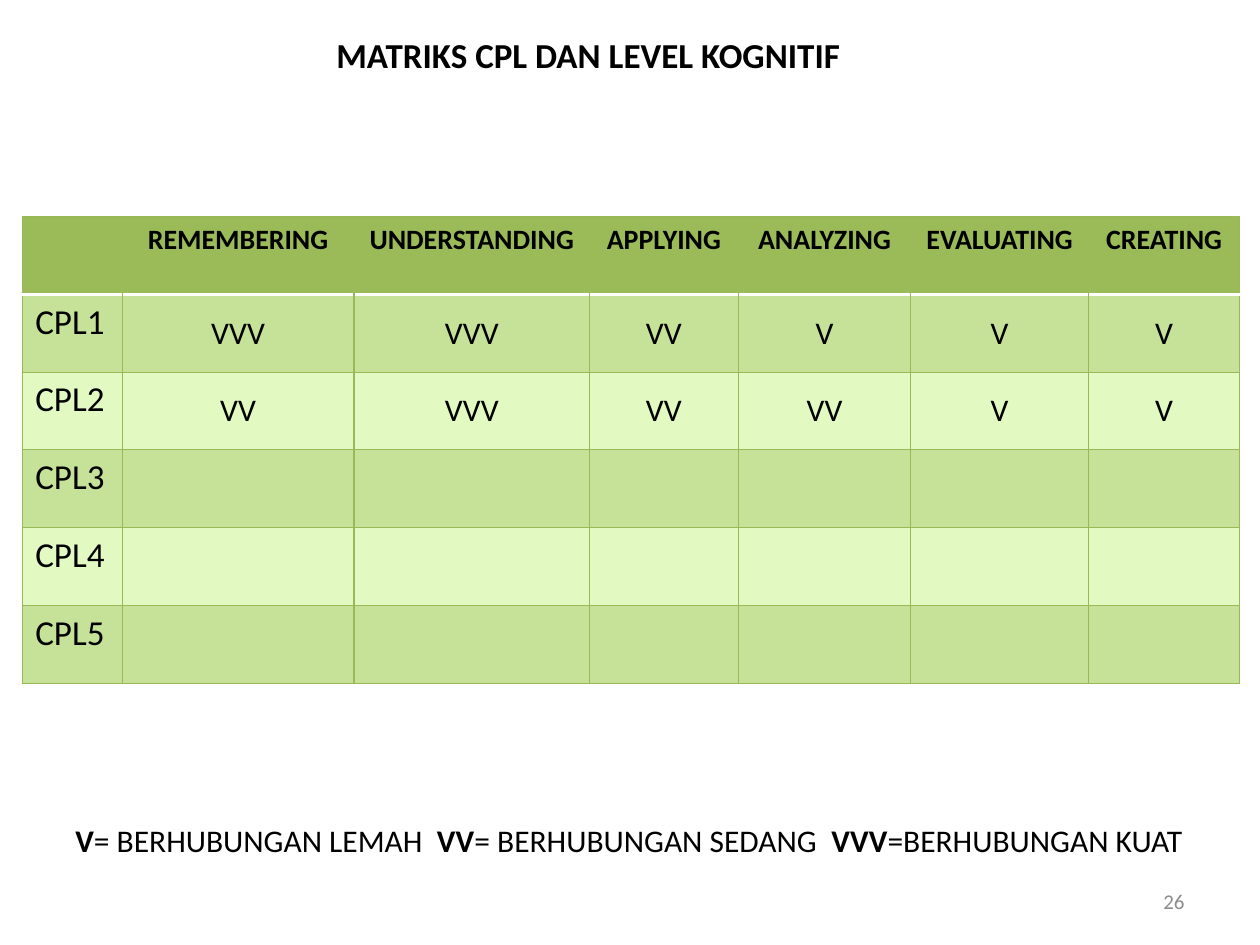
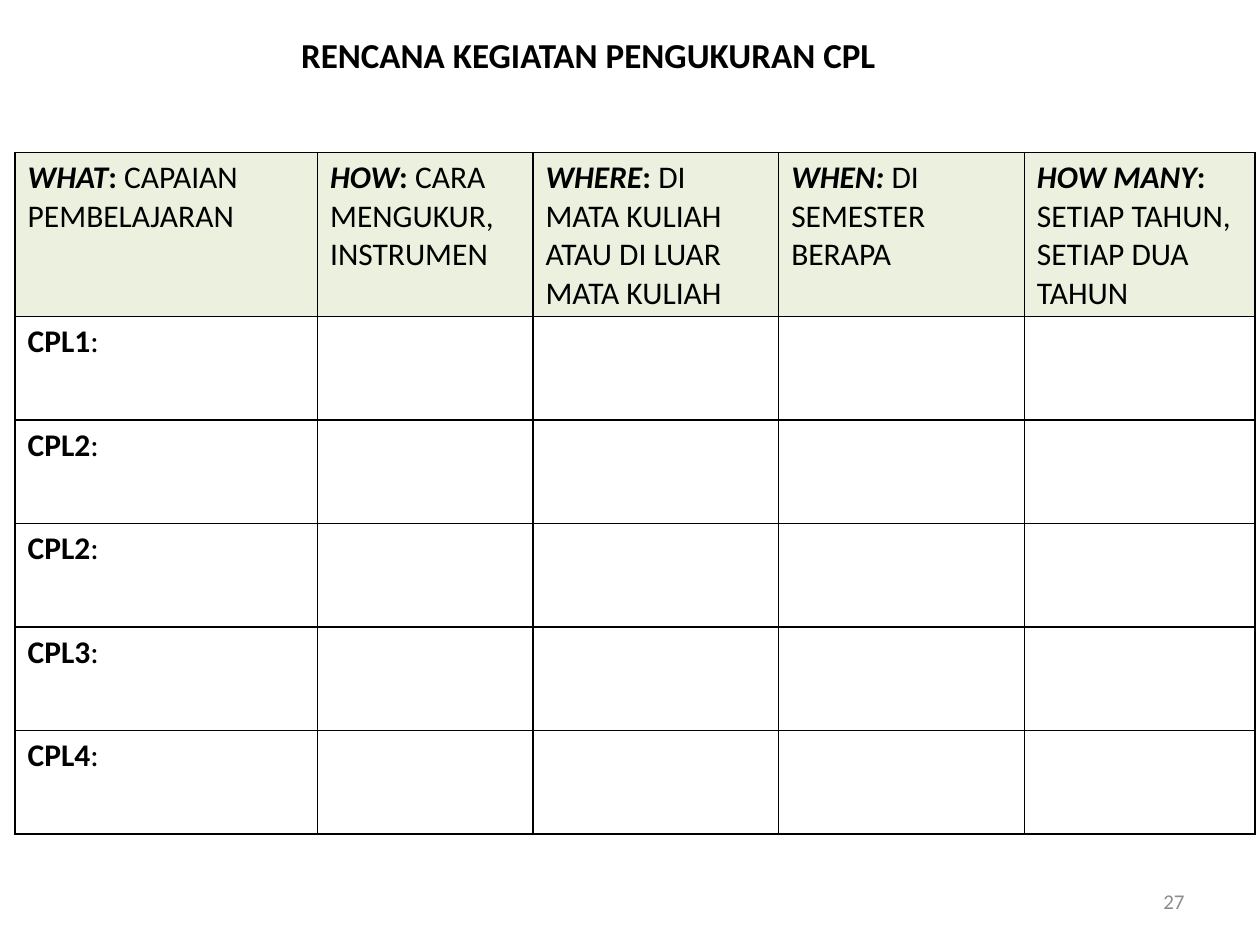
from dataclasses import dataclass
from typing import NamedTuple

from lxml import etree
from pptx import Presentation
from pptx import util as u
from pptx.dml.color import RGBColor
from pptx.enum import text as t
from pptx.oxml import ns

COLUMNS, ROWS = 100, 75  # the slide as a grid of square cells
SLIDE_WIDTH, SLIDE_HEIGHT = u.Inches(10), u.Inches(7.5)

FONT = "Calibri"
BLACK, WHITE, GREY = "000000", "FFFFFF", "8C8C8C"
GREEN, GREEN_LINE = "9BBB59", "98B955"
BAND_DARK, BAND_LIGHT = "C6E298", "E2FAC2"
PALE_GREEN = "EBF1DE"
PLAIN_TABLE_STYLE = "{2D5ABB26-0587-4C30-8999-92F81FD0307C}"


class Span(NamedTuple):
    text: str
    bold: bool = False
    italic: bool = False


class Style(NamedTuple):
    size: float
    align: t.PP_ALIGN = t.PP_ALIGN.LEFT
    anchor: t.MSO_ANCHOR = t.MSO_ANCHOR.TOP
    color: str = BLACK


class Area(NamedTuple):
    left: float
    top: float
    width: float
    height: float


class Edge(NamedTuple):
    color: str
    points: float


@dataclass
class Cell:
    spans: list[Span]
    style: Style
    fill: str
    edges: dict[str, Edge]


TITLE_AREA = Area(0.3, 2.2, 92.8, 5.5)
NUMBER_AREA = Area(71.7, 69.5, 23.3, 4)
TITLE = Style(20, t.PP_ALIGN.CENTER)
NUMBER = Style(12, t.PP_ALIGN.RIGHT, t.MSO_ANCHOR.MIDDLE, GREY)
BODY = Style(18)

LEVELS = ["REMEMBERING", "UNDERSTANDING", "APPLYING",
          "ANALYZING", "EVALUATING", "CREATING"]
STRENGTHS = {
    "CPL1": ["VVV", "VVV", "VV", "V", "V", "V"],
    "CPL2": ["VV", "VVV", "VV", "VV", "V", "V"],
    "CPL3": [""] * 6,
    "CPL4": [""] * 6,
    "CPL5": [""] * 6,
}
LEGEND = [
    Span("V", bold=True), Span("= BERHUBUNGAN LEMAH\t"),
    Span("VV", bold=True), Span("= BERHUBUNGAN SEDANG\t"),
    Span("VVV", bold=True), Span("=BERHUBUNGAN KUAT"),
]
QUESTIONS = [
    [Span("WHAT", True, True), Span(": ", True), Span("CAPAIAN PEMBELAJARAN")],
    [Span("HOW", True, True), Span(": ", True), Span("CARA MENGUKUR, INSTRUMEN")],
    [Span("WHERE", True, True), Span(": ", True),
     Span("DI MATA KULIAH ATAU DI LUAR MATA KULIAH")],
    [Span("WHEN: ", True, True), Span("DI SEMESTER BERAPA")],
    [Span("HOW MANY", True, True), Span(": ", True),
     Span("SETIAP TAHUN, SETIAP DUA TAHUN")],
]
OUTCOMES = ["CPL1", "CPL2", "CPL2", "CPL3", "CPL4"]


def across(columns: float) -> int:
    return round(SLIDE_WIDTH * columns / COLUMNS)


def down(rows: float) -> int:
    return round(SLIDE_HEIGHT * rows / ROWS)


def place(area: Area) -> tuple[int, int, int, int]:
    return across(area.left), down(area.top), across(area.width), down(area.height)


def rgb(color: str) -> RGBColor:
    return RGBColor.from_string(color)


def write(frame, spans: list[Span], style: Style, tabs: tuple[float, ...] = ()) -> None:
    """Fill the first paragraph; tabs are grid columns from the text's left edge."""
    paragraph = frame.paragraphs[0]
    paragraph.alignment = style.align
    if tabs:
        tab_list = etree.SubElement(paragraph._p.get_or_add_pPr(), ns.qn("a:tabLst"))
        for stop in tabs:
            etree.SubElement(tab_list, ns.qn("a:tab"), pos=str(across(stop)), algn="l")
    font = paragraph.font
    font.name, font.size = FONT, u.Pt(style.size)
    font.color.rgb = rgb(style.color)
    font.bold = bool(spans) and all(span.bold for span in spans)
    for span in spans:
        run = paragraph.add_run()
        run.text = span.text
        run.font.bold, run.font.italic = span.bold, span.italic


def add_text(slide, area: Area, spans: list[Span], style: Style,
             tabs: tuple[float, ...] = ()) -> None:
    frame = slide.shapes.add_textbox(*place(area)).text_frame
    frame.word_wrap = True
    frame.vertical_anchor = style.anchor
    write(frame, spans, style, tabs)


def draw_edges(cell, edges: dict[str, Edge]) -> None:
    properties = cell._tc.get_or_add_tcPr()
    for side in "LRTB":
        if side in edges:
            edge = edges[side]
            line = etree.SubElement(properties, ns.qn(f"a:ln{side}"),
                                    w=str(u.Pt(edge.points)))
            paint = etree.SubElement(line, ns.qn("a:solidFill"))
            etree.SubElement(paint, ns.qn("a:srgbClr"), val=edge.color)


def add_grid(slide, left: float, top: float, widths: list[float],
             heights: list[float], cells: list[list[Cell]]) -> None:
    area = Area(left, top, sum(widths), sum(heights))
    table = slide.shapes.add_table(len(heights), len(widths), *place(area)).table
    table.first_row = table.horz_banding = False
    table._tbl.tblPr.find(ns.qn("a:tableStyleId")).text = PLAIN_TABLE_STYLE
    for column, width in zip(table.columns, widths):
        column.width = across(width)
    for row, height, contents in zip(table.rows, heights, cells):
        row.height = down(height)
        for cell, content in zip(row.cells, contents):
            draw_edges(cell, content.edges)
            cell.fill.solid()
            cell.fill.fore_color.rgb = rgb(content.fill)
            cell.vertical_anchor = content.style.anchor
            write(cell.text_frame, content.spans, content.style)


def spans_of(label: str, bold: bool = False) -> list[Span]:
    return [Span(label, bold)] if label else []


def add_page(deck, title: str, number: int):
    slide = deck.slides.add_slide(deck.slide_layouts[6])
    add_text(slide, TITLE_AREA, [Span(title, bold=True)], TITLE)
    add_text(slide, NUMBER_AREA, [Span(str(number))], NUMBER)
    return slide


def build_level_matrix(deck) -> None:
    slide = add_page(deck, "MATRIKS CPL DAN LEVEL KOGNITIF", 26)
    heading = Style(16, t.PP_ALIGN.CENTER)
    outcome = Style(20)
    strength = Style(18, t.PP_ALIGN.CENTER, t.MSO_ANCHOR.MIDDLE)
    green, divider = Edge(GREEN_LINE, 0.75), Edge(WHITE, 2)

    header = [Cell(spans_of(level, bold=True), heading, GREEN, {"T": green, "B": divider})
              for level in ["", *LEVELS]]
    header[0].edges["L"] = header[-1].edges["R"] = green
    cells = [header]
    for index, (name, marks) in enumerate(STRENGTHS.items()):
        fill = BAND_LIGHT if index % 2 else BAND_DARK
        edges = dict.fromkeys("LRTB", green)
        if index == 0:
            edges["T"] = divider
        cells.append([Cell(spans_of(name), outcome, fill, edges)]
                     + [Cell(spans_of(mark), strength, fill, edges) for mark in marks])
    add_grid(slide, 1.8, 17.2, [7.9, 18.4, 18.7, 11.8, 13.7, 14.1, 12],
             [6.17] * len(cells), cells)
    add_text(slide, Area(5, 64.7, 93.3, 4), LEGEND, BODY, tabs=(28.7, 60))


def build_measurement_plan(deck) -> None:
    slide = add_page(deck, "RENCANA KEGIATAN PENGUKURAN CPL", 27)
    edges = dict.fromkeys("LRTB", Edge(BLACK, 1))
    cells = [[Cell(question, BODY, PALE_GREEN, edges) for question in QUESTIONS]]
    for name in OUTCOMES:
        label = [Span(name, bold=True), Span(":")]
        blanks = [[] for _ in QUESTIONS[1:]]
        cells.append([Cell(spans, BODY, WHITE, edges) for spans in [label, *blanks]])
    add_grid(slide, 1.2, 12.1, [24, 17.1, 19.5, 19.5, 18.3],
             [13] + [8.22] * len(OUTCOMES), cells)


def main() -> None:
    deck = Presentation()
    deck.slide_width, deck.slide_height = SLIDE_WIDTH, SLIDE_HEIGHT
    build_level_matrix(deck)
    build_measurement_plan(deck)
    deck.save("out.pptx")


if __name__ == "__main__":
    main()
